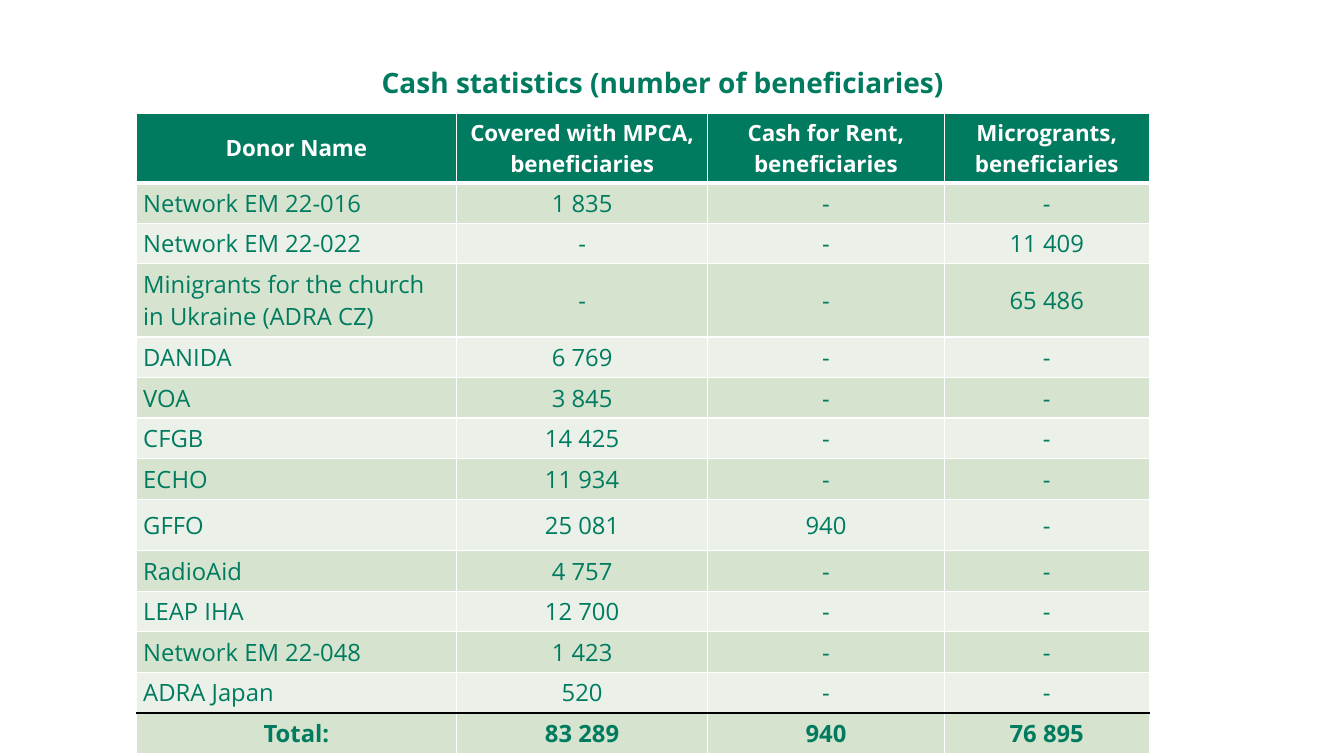
"""Build the cash statistics slide with a table of beneficiaries per donor."""
from pptx import Presentation
from pptx.dml import color
from pptx.enum import text
from pptx.oxml import parse_xml
from pptx.oxml import ns
from pptx.util import Cm, Pt

TITLE = "Cash statistics (number of beneficiaries)"
ROWS = [
    ("Donor Name", "Covered with MPCA, beneficiaries", "Cash for Rent, beneficiaries",
     "Microgrants, beneficiaries"),
    ("Network EM 22-016", "1 835", "-", "-"),
    ("Network EM 22-022", "-", "-", "11 409"),
    ("Minigrants for the church in Ukraine (ADRA CZ)", "-", "-", "65 486"),
    ("DANIDA", "6 769", "-", "-"),
    ("VOA", "3 845", "-", "-"),
    ("CFGB", "14 425", "-", "-"),
    ("ECHO", "11 934", "-", "-"),
    ("GFFO", "25 081", "940", "-"),
    ("RadioAid", "4 757", "-", "-"),
    ("LEAP IHA", "12 700", "-", "-"),
    ("Network EM 22-048", "1 423", "-", "-"),
    ("ADRA Japan", "520", "-", "-"),
    ("Total:", "83 289", "940", "76 895"),
]
COL_WIDTHS = (8.08, 6.32, 5.97, 5.16)
ROW_HEIGHT = 1.0
TALL_ROWS = {0: 1.7, 3: 1.81, 8: 1.3}
LEFT, TOP = 3.43, 2.87
GREEN, WHITE, BLACK = "007B5F", "FFFFFF", "000000"
BANDS = ("EBF1E9", "D5E3CF")
FONT = "Open Sans"


def rgb(value):
    return color.RGBColor.from_string(value)


def write(tf, content, size=17, fill=GREEN, bold=False,
          align=text.PP_ALIGN.CENTER, spacing=None):
    p = tf.paragraphs[0]
    p.alignment = align
    p.line_spacing = spacing
    r = p.add_run()
    r.text = content
    r.font.name, r.font.size, r.font.bold = FONT, Pt(size), bold
    r.font.color.rgb = rgb(fill)


def set_border(cell, side, value, width):
    cell._tc.get_or_add_tcPr().append(parse_xml(
        f'<a:ln{side} {ns.nsdecls("a")} w="{Pt(width)}"><a:solidFill>'
        f'<a:srgbClr val="{value}"/></a:solidFill></a:ln{side}>'))


def format_cell(cell, row, col):
    last = len(ROWS) - 1
    header = row == 0
    cell.margin_left = cell.margin_right = Cm(0.18)
    cell.margin_top = cell.margin_bottom = Cm(0.1)
    cell.vertical_anchor = text.MSO_ANCHOR.MIDDLE
    top = BLACK if row == last else WHITE
    bottom = BLACK if row == last - 1 else WHITE
    set_border(cell, "L", WHITE, 1)
    set_border(cell, "R", WHITE, 1)
    set_border(cell, "T", top, 3 if row == 1 else 1)
    set_border(cell, "B", bottom, 3 if header else 1)
    cell.fill.solid()
    cell.fill.fore_color.rgb = rgb(GREEN if header else BANDS[row % 2])
    named = col == 0 and 0 < row < last
    write(cell.text_frame, ROWS[row][col], size=16 if header else 17,
          fill=WHITE if header else GREEN, bold=row in (0, last),
          align=text.PP_ALIGN.LEFT if named else text.PP_ALIGN.CENTER)


def add_title(s):
    sp = s.shapes.title
    sp.left, sp.top, sp.width, sp.height = Cm(4.45), Cm(1.09), Cm(24.51), Cm(1.55)
    sp.text_frame.vertical_anchor = text.MSO_ANCHOR.BOTTOM
    write(sp.text_frame, TITLE, size=20, bold=True, spacing=0.9)


def add_donor_table(s):
    heights = [TALL_ROWS.get(i, ROW_HEIGHT) for i in range(len(ROWS))]
    table = s.shapes.add_table(len(ROWS), len(COL_WIDTHS), Cm(LEFT), Cm(TOP),
                               Cm(sum(COL_WIDTHS)), Cm(sum(heights))).table
    table.horz_banding = False
    for column, width in zip(table.columns, COL_WIDTHS):
        column.width = Cm(width)
    for row, height in enumerate(heights):
        table.rows[row].height = Cm(height)
        for col in range(len(COL_WIDTHS)):
            format_cell(table.cell(row, col), row, col)


def main():
    prs = Presentation()
    prs.slide_width, prs.slide_height = Cm(33.87), Cm(19.05)
    s = prs.slides.add_slide(prs.slide_layouts[5])
    add_title(s)
    add_donor_table(s)
    prs.save("out.pptx")


if __name__ == "__main__":
    main()
